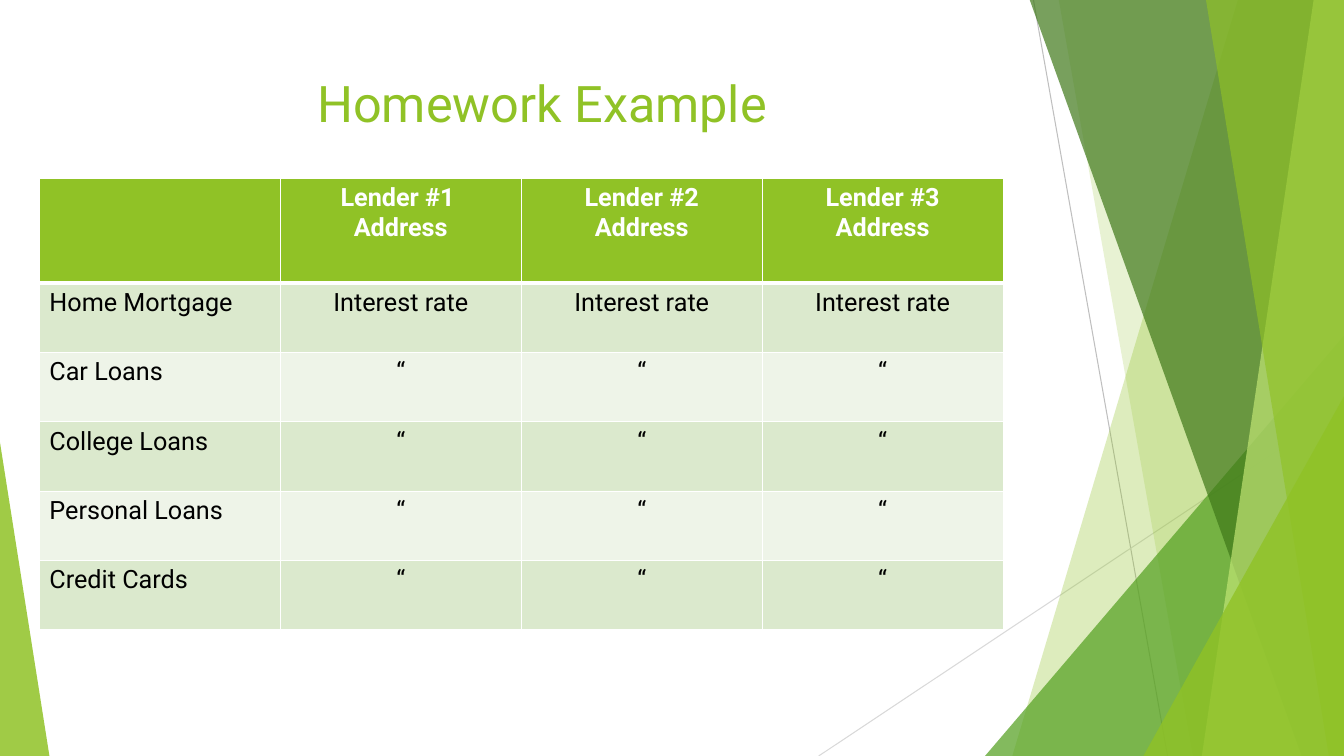
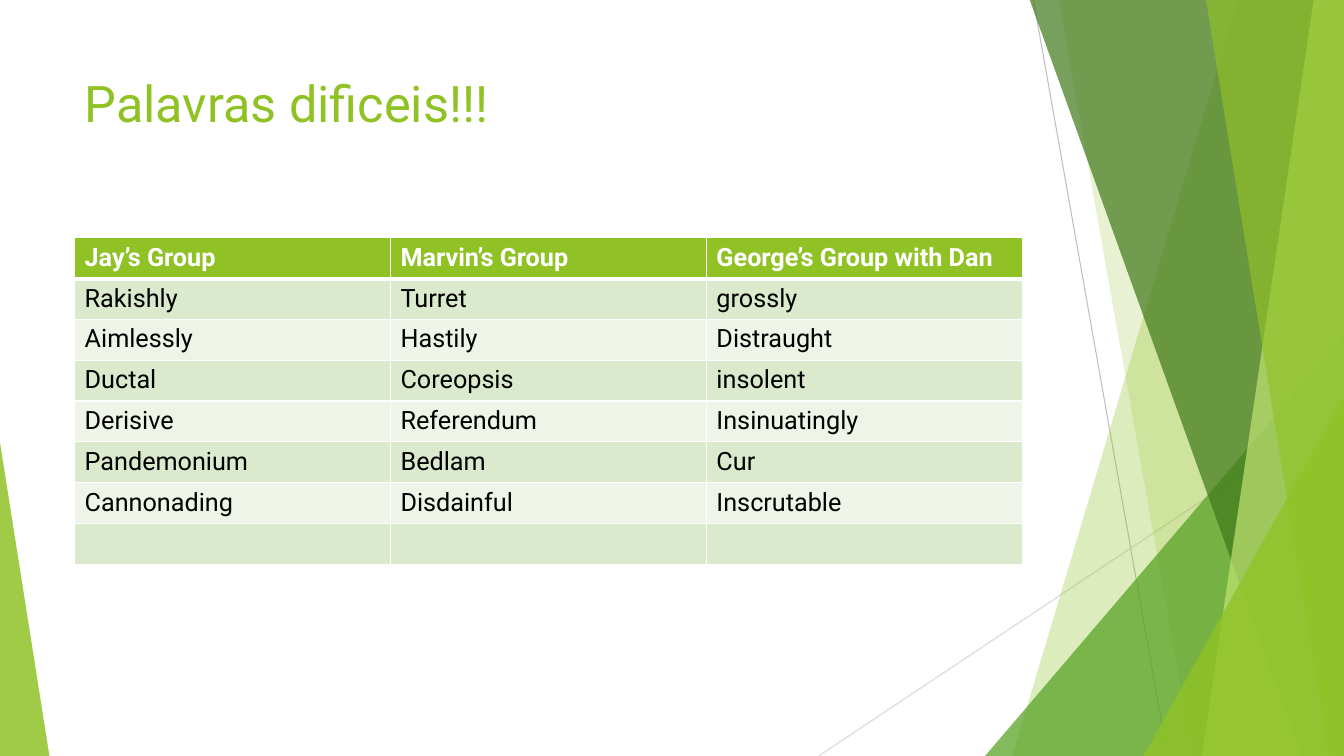
from lxml import etree
from pptx import Presentation
from pptx import util as u
from pptx.dml import color
from pptx.enum import shapes, text
from pptx.oxml import ns

FONT = "Roboto"
WHITE, BLACK = "FFFFFF", "000000"
LIME, LEAF, FOREST, PALE = "90C226", "54A021", "3F7819", "C0E474"
BANDS = ("DBE9CD", "EEF4E8")
WIDTH, HEIGHT, BLEED = 13.33, 7.5, -0.01
LEFT, CENTER = text.PP_ALIGN.LEFT, text.PP_ALIGN.CENTER
TITLE_BOX = (0.74, 0.67, 9.4, 1.44)

# x where each facet's left edge meets the top and the bottom, colour, opacity
FACETS_BEHIND = [(12.28, 10.04, LIME, 30), (10.5, 11.83, LIME, 20)]
FACETS_FRONT = [(10.21, 12.91, FOREST, 70), (13.03, 11.92, PALE, 70),
                (11.96, 13.18, LIME, 65)]


def rgb(hex_code):
    return color.RGBColor.from_string(hex_code)


def inches(values):
    return [u.Inches(value) for value in values]


def write(frame, content, size=18, ink=BLACK, bold=False, align=LEFT):
    """Fill a text frame, one paragraph for each line of content."""
    for number, line in enumerate(content.split("\n")):
        paragraph = frame.paragraphs[0] if number == 0 else frame.add_paragraph()
        paragraph.alignment = align
        run = paragraph.add_run()
        run.text = line
        run.font.name = FONT
        run.font.size = u.Pt(size)
        run.font.bold = bold
        run.font.color.rgb = rgb(ink)


def paint(shape, hex_code, opacity):
    shape.shadow.inherit = False
    shape.line.fill.background()
    shape.fill.solid()
    shape.fill.fore_color.rgb = rgb(hex_code)
    tint = shape.element.spPr.find(".//" + ns.qn("a:srgbClr"))
    etree.SubElement(tint, ns.qn("a:alpha"), val=str(opacity * 1000))


def add_hairline(slide, ends, hex_code):
    line = slide.shapes.add_connector(shapes.MSO_CONNECTOR.STRAIGHT, *inches(ends))
    line.line.width = u.Pt(0.75)
    line.line.color.rgb = rgb(hex_code)
    etree.SubElement(line.element.spPr, ns.qn("a:effectLst"))


def add_facet(slide, top_x, bottom_x, hex_code, opacity):
    """Draw a full-height facet that runs to the right edge of the slide."""
    corners = [(WIDTH, BLEED), (WIDTH, HEIGHT), (bottom_x, HEIGHT)]
    builder = slide.shapes.build_freeform(u.Inches(top_x), u.Inches(BLEED))
    builder.add_line_segments([inches(corner) for corner in corners], close=True)
    paint(builder.convert_to_shape(), hex_code, opacity)


def add_corner(slide, left, top, width, apex, hex_code, opacity):
    """Draw a triangle that stands on the bottom edge of the slide."""
    corner = slide.shapes.add_shape(shapes.MSO_SHAPE.ISOSCELES_TRIANGLE,
                                    *inches((left, top, width, HEIGHT - top)))
    corner.adjustments[0] = apex
    paint(corner, hex_code, opacity)


def decorate_layout(layout, slide):
    """Draw the shared artwork on a slide and move it to the layout."""
    existing = set(slide.shapes.element)
    add_hairline(slide, (10.25, 0, 11.58, HEIGHT), "BFBFBF")
    add_hairline(slide, (WIDTH, 4.03, 8.12, HEIGHT), "D9D9D9")
    for facet in FACETS_BEHIND:
        add_facet(slide, *facet)
    add_corner(slide, 9.77, 3.33, 3.56, 1, LEAF, 72)
    for facet in FACETS_FRONT:
        add_facet(slide, *facet)
    add_corner(slide, 11.34, 3.93, 1.99, 1, LIME, 80)
    add_corner(slide, 0, 4.39, 0.49, 0, LIME, 85)
    artwork = [part for part in slide.shapes.element if part not in existing]
    for number, part in enumerate(artwork):
        part.find(".//" + ns.qn("p:cNvPr")).set("id", str(100 + number))
        layout.shapes.element.insert(2 + number, part)


def add_title(slide, heading, align=LEFT):
    title = slide.shapes.title
    title.left, title.top, title.width, title.height = inches(TITLE_BOX)
    title.text_frame.vertical_anchor = text.MSO_ANCHOR.TOP
    title.text_frame.word_wrap = True
    write(title.text_frame, heading, size=36, ink=LIME, align=align)


def set_borders(cell, top, bottom):
    """Give a cell white borders, 1 pt at the sides."""
    properties = cell._tc.get_or_add_tcPr()
    for side, points in (("L", 1), ("R", 1), ("T", top), ("B", bottom)):
        line = etree.SubElement(properties, ns.qn("a:ln" + side),
                                w=str(u.Pt(points)))
        fill = etree.SubElement(line, ns.qn("a:solidFill"))
        etree.SubElement(fill, ns.qn("a:srgbClr"), val=WHITE)


def add_grid(slide, box, rows, header_height=None, align=LEFT):
    """Draw a banded table; the first column of its body stays left-aligned."""
    left, top, width, height = box
    table = slide.shapes.add_table(len(rows), len(rows[0]), *inches(box)).table
    if header_height:
        body_height = (height - header_height) / (len(rows) - 1)
        for number, row in enumerate(table.rows):
            row.height = u.Inches(body_height if number else header_height)
    for r, row in enumerate(rows):
        is_header = r == 0
        for c, content in enumerate(row):
            cell = table.cell(r, c)
            set_borders(cell, top=3 if r == 1 else 1, bottom=3 if is_header else 1)
            cell.fill.solid()
            cell.fill.fore_color.rgb = rgb(LIME if is_header else BANDS[(r - 1) % 2])
            if content:
                write(cell.text_frame, content, ink=WHITE if is_header else BLACK,
                      bold=is_header, align=align if is_header or c else LEFT)


def fill_homework(slide):
    add_title(slide, "Homework Example ", CENTER)
    loans = ["Car Loans", "College Loans", "Personal Loans", "Credit Cards"]
    rows = [["", "Lender #1 \nAddress", "Lender #2\nAddress", "Lender #3\nAddress"],
            ["Home Mortgage"] + ["Interest rate"] * 3]
    rows += [[loan] + ["“"] * 3 for loan in loans]
    add_grid(slide, (0.39, 1.77, 9.56, 4.48), rows, 1.04, CENTER)


def fill_vocabulary(slide):
    add_title(slide, "Palavras dificeis!!!")
    rows = [["Jay’s Group", "Marvin’s Group", "George’s Group with Dan"],
            ["Rakishly", "Turret", "grossly"],
            ["Aimlessly", "Hastily", "Distraught"],
            ["Ductal", "Coreopsis", "insolent"],
            ["Derisive", "Referendum", "Insinuatingly"],
            ["Pandemonium", "Bedlam", "Cur"],
            ["Cannonading", "Disdainful", "Inscrutable"],
            ["", "", ""]]
    add_grid(slide, (0.74, 2.36, 9.4, 3.24), rows)


def main():
    deck = Presentation()
    deck.slide_width, deck.slide_height = inches((WIDTH, HEIGHT))
    layout = deck.slide_layouts.get_by_name("Title Only")
    homework, vocabulary = [deck.slides.add_slide(layout) for _ in range(2)]
    decorate_layout(layout, homework)
    fill_homework(homework)
    fill_vocabulary(vocabulary)
    deck.save("out.pptx")


if __name__ == "__main__":
    main()
